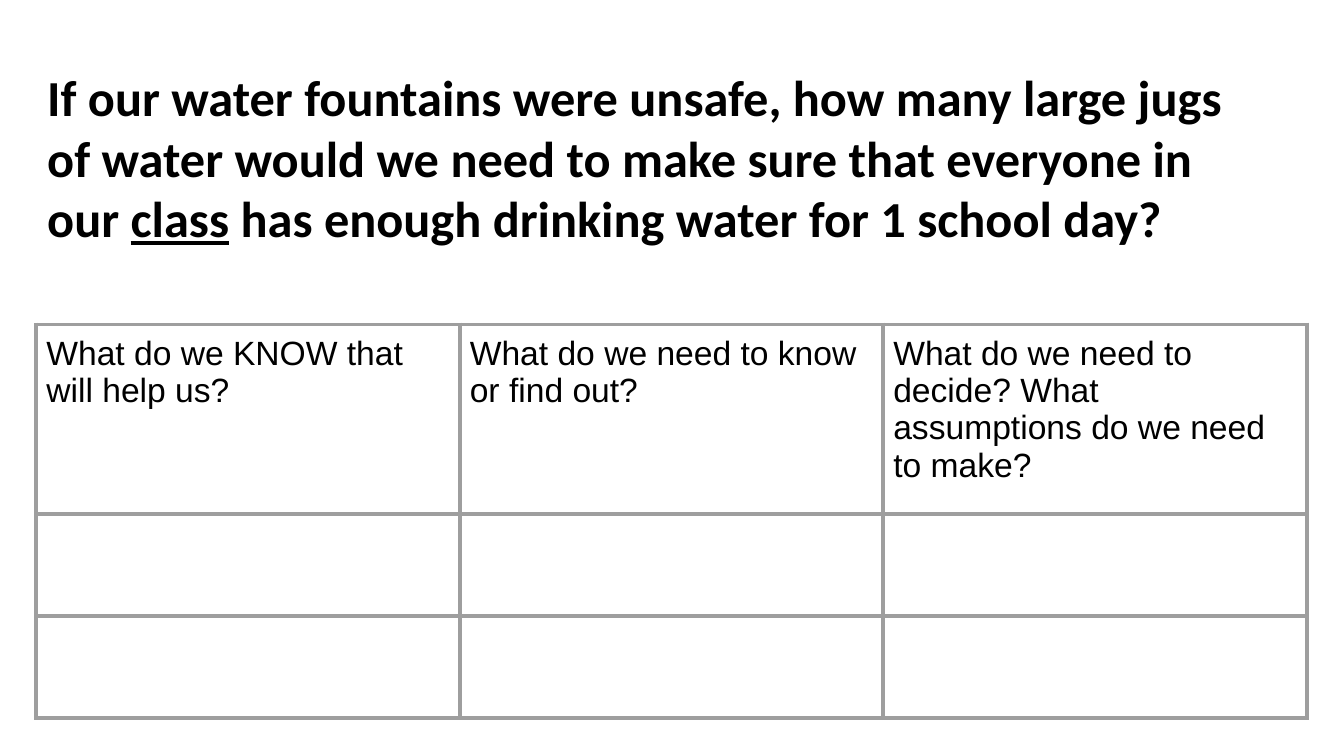
from dataclasses import dataclass

from lxml.etree import SubElement
from pptx import Presentation
from pptx.dml.color import RGBColor as RGB
from pptx.enum.text import MSO_ANCHOR as Anchor
from pptx.oxml.ns import qn
from pptx.util import Inches, Pt


@dataclass(frozen=True)
class Theme:
    ink: RGB = RGB(0, 0, 0)
    border: str = "9E9E9E"
    border_width: int = Pt(3)
    question_font: str = "Calibri"
    question_size: int = Pt(36)
    prompt_font: str = "Arial"
    prompt_size: int = Pt(24)


theme = Theme()


def add_text(paragraph, text, font, size, bold=False, underline=False):
    run = paragraph.add_run()
    run.text = text
    run.font.name = font
    run.font.size = size
    run.font.bold = bold
    run.font.underline = underline
    run.font.color.rgb = theme.ink


def add_borders(cell):
    properties = cell._tc.get_or_add_tcPr()
    for side in ("lnL", "lnR", "lnT", "lnB"):
        line = SubElement(properties, qn(f"a:{side}"), w=str(theme.border_width))
        fill = SubElement(line, qn("a:solidFill"))
        SubElement(fill, qn("a:srgbClr"), val=theme.border)


prs = Presentation()
prs.slide_width = Inches(13.33)
prs.slide_height = Inches(7.5)
slide = prs.slides.add_slide(prs.slide_layouts[6])

# Question
question = slide.shapes.add_textbox(
    Inches(0.37), Inches(0.4), Inches(12.17), Inches(2.32)
).text_frame
question.word_wrap = True
question.vertical_anchor = Anchor.MIDDLE
question_parts = [
    ("If our water fountains were unsafe, how many large jugs of water would "
     "we need to make sure that everyone in our ", False),
    ("class", True),
    (" has enough drinking water for 1 school day?", False),
]
for words, underlined in question_parts:
    add_text(question.paragraphs[0], words, font=theme.question_font,
             size=theme.question_size, bold=True, underline=underlined)

# Planning table: prompts on top, empty rows for the answers
prompts = [
    "What do we KNOW that will help us?",
    "What do we need to know or find out?",
    "What do we need to decide? What assumptions do we need to make?",
]
column_width = 4.2
row_heights = [1.88, 1.01, 1.01]
planner = slide.shapes.add_table(
    len(row_heights), len(prompts), Inches(0.36), Inches(3.22),
    Inches(column_width * len(prompts)), Inches(sum(row_heights)),
).table
planner.first_row = False
planner.horz_banding = False
for column in planner.columns:
    column.width = Inches(column_width)
for row, height in zip(planner.rows, row_heights):
    row.height = Inches(height)

for cell in planner.iter_cells():
    cell.margin_left = cell.margin_right = Inches(0.1)
    cell.margin_top = cell.margin_bottom = Inches(0.1)
    add_borders(cell)
    cell.fill.background()

for cell, prompt in zip(planner.rows[0].cells, prompts):
    add_text(cell.text_frame.paragraphs[0], prompt,
             font=theme.prompt_font, size=theme.prompt_size)

prs.save("out.pptx")
